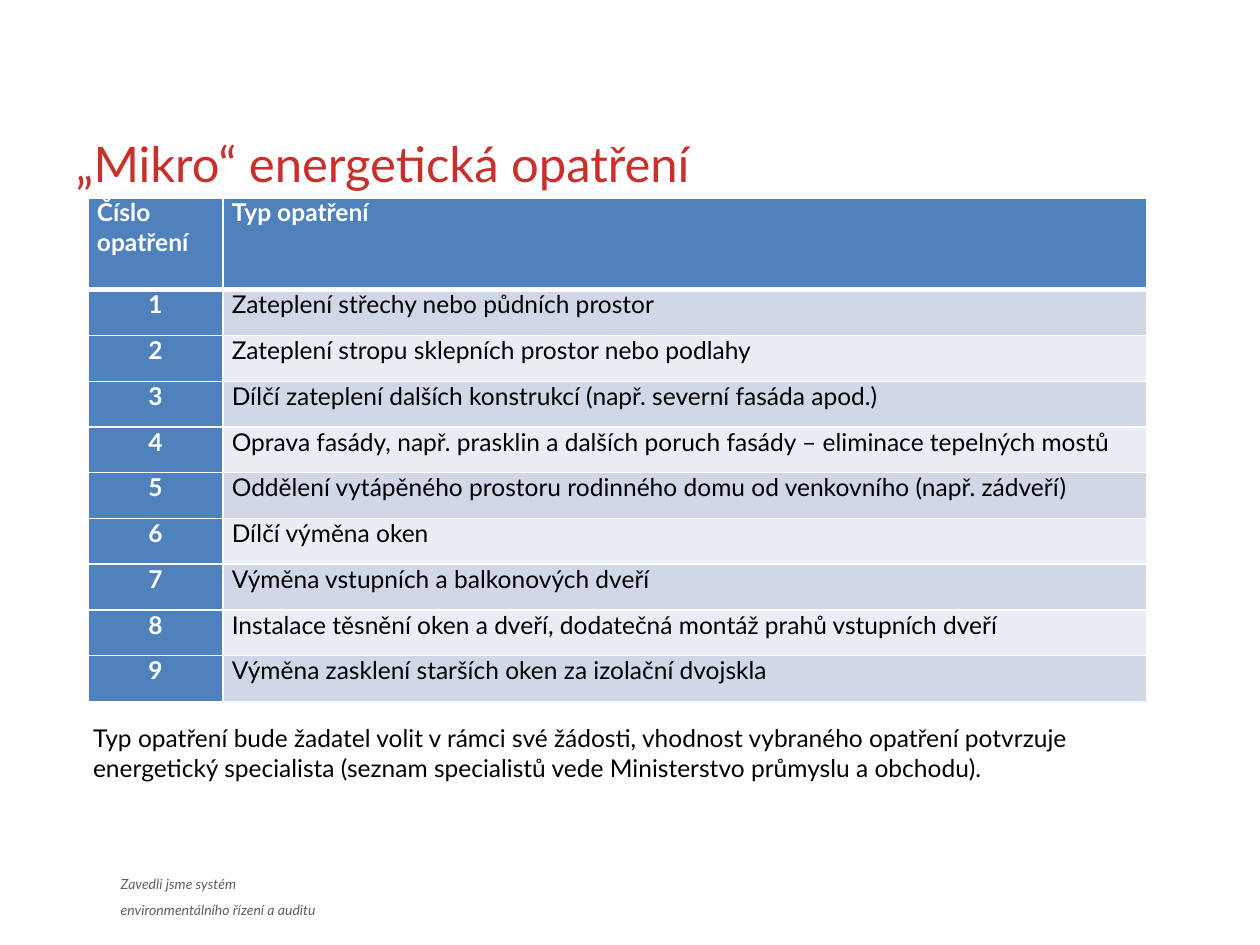
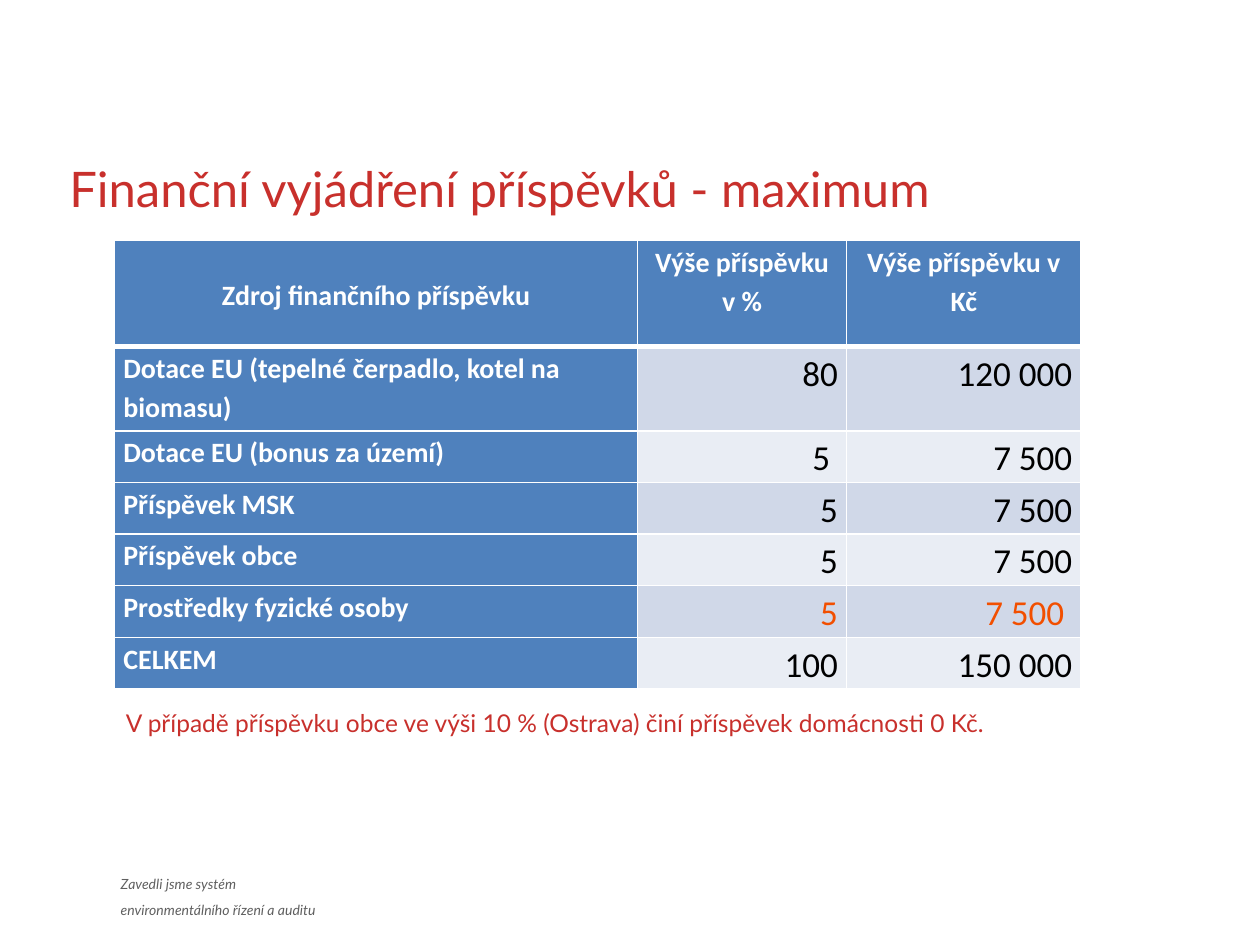
from pptx import Presentation
from pptx.dml.color import RGBColor
from pptx.enum.text import MSO_ANCHOR, MSO_AUTO_SIZE, PP_ALIGN
from pptx.oxml import parse_xml
from pptx.oxml.ns import nsdecls
from pptx.util import Inches, Pt

RED = RGBColor(0xC8, 0x30, 0x2C)
ORANGE = RGBColor(0xF2, 0x4F, 0x00)
BLUE = RGBColor(0x4F, 0x81, 0xBD)
BAND_DARK = RGBColor(0xD0, 0xD8, 0xE8)
BAND_LIGHT = RGBColor(0xE9, 0xED, 0xF4)
GREY = RGBColor(0x5F, 0x5F, 0x5F)
BLACK = RGBColor(0, 0, 0)
WHITE = RGBColor(0xFF, 0xFF, 0xFF)

TEXT_FONT = "Lato"
LEFT, CENTER, RIGHT, JUSTIFY = (
    PP_ALIGN.LEFT, PP_ALIGN.CENTER, PP_ALIGN.RIGHT, PP_ALIGN.JUSTIFY)


class Deck:
    """Holds the presentation, its style and the current slide."""

    def __init__(self):
        self.presentation = Presentation()
        self.presentation.slide_width = Inches(10)
        self.presentation.slide_height = Inches(7.5)
        self.slide = None

    def add_slide(self, title, left, top, width):
        layout = self.presentation.slide_layouts.get_by_name("Title Only")
        self.slide = self.presentation.slides.add_slide(layout)
        self.add_footer()
        shape = self.slide.shapes.title
        shape.left, shape.top = Inches(left), Inches(top)
        shape.width, shape.height = Inches(width), Inches(0.61)
        self.fill_frame(shape.text_frame, [title], 28, RED, MSO_ANCHOR.MIDDLE)

    def add_run(self, paragraph, text, size, color, font=TEXT_FONT, align=LEFT,
                bold=False, italic=False, line_spacing=1.0):
        paragraph.alignment = align
        paragraph.line_spacing = line_spacing
        run = paragraph.add_run()
        run.text = text
        run.font.name = font
        run.font.size = Pt(size)
        run.font.bold = bold
        run.font.italic = italic
        run.font.color.rgb = color

    def fill_frame(self, frame, lines, size, color, anchor=MSO_ANCHOR.TOP, **style):
        frame.word_wrap = True
        frame.auto_size = MSO_AUTO_SIZE.NONE
        frame.vertical_anchor = anchor
        for index, line in enumerate(lines):
            paragraph = frame.add_paragraph() if index else frame.paragraphs[0]
            paragraph.space_before = Pt(size / 2 if index else 0)
            self.add_run(paragraph, line, size, color, **style)

    def add_text(self, lines, left, top, width, height, size, color, **style):
        shape = self.slide.shapes.add_textbox(
            Inches(left), Inches(top), Inches(width), Inches(height))
        self.fill_frame(shape.text_frame, lines, size, color, **style)

    def add_footer(self):
        self.add_text(["Zavedli jsme systém", "environmentálního řízení a auditu"],
                      0.86, 6.88, 1.89, 0.41, 8, GREY,
                      align=JUSTIFY, italic=True, line_spacing=1.15)

    def add_table(self, rows, left, top, column_widths, row_heights):
        """Adds a banded table and returns it with its cells still empty of text."""
        table = self.slide.shapes.add_table(
            len(rows), len(column_widths), Inches(left), Inches(top),
            Inches(sum(column_widths)), Inches(sum(row_heights))).table
        for column, width in zip(table.columns, column_widths):
            column.width = Inches(width)
        for row, height in zip(table.rows, row_heights):
            row.height = Inches(height)
        for row_index, row in enumerate(table.rows):
            for column_index, cell in enumerate(row.cells):
                self.style_cell(cell, row_index, column_index)
        return table

    def style_cell(self, cell, row_index, column_index):
        cell.margin_left = cell.margin_right = Inches(0.07)
        cell.margin_top = cell.margin_bottom = 0
        # The rule under the header is thicker than the others
        widths = {"L": 1, "R": 1, "T": 3 if row_index == 1 else 1,
                  "B": 3 if row_index == 0 else 1}
        properties = cell._tc.get_or_add_tcPr()
        for side, width in widths.items():
            properties.append(parse_xml(
                f'<a:ln{side} {nsdecls("a")} w="{Pt(width)}"><a:solidFill>'
                f'<a:srgbClr val="{WHITE}"/></a:solidFill></a:ln{side}>'))
        cell.fill.solid()
        if row_index == 0 or column_index == 0:
            cell.fill.fore_color.rgb = BLUE
        else:
            cell.fill.fore_color.rgb = BAND_DARK if row_index % 2 else BAND_LIGHT

    def fill_cell(self, cell, text, size, color, **style):
        self.add_run(cell.text_frame.paragraphs[0], text, size, color, **style)


def build_measures(deck):
    deck.add_slide("„Mikro“ energetická opatření", 0.5, 0.99, 6.13)

    # Numbered list of measures
    measures = [
        "Zateplení střechy nebo půdních prostor",
        "Zateplení stropu sklepních prostor nebo podlahy",
        "Dílčí zateplení dalších konstrukcí (např. severní fasáda apod.)",
        "Oprava fasády, např. prasklin a dalších poruch fasády – eliminace tepelných mostů",
        "Oddělení vytápěného prostoru rodinného domu od venkovního (např. zádveří)",
        "Dílčí výměna oken",
        "Výměna vstupních a balkonových dveří",
        "Instalace těsnění oken a dveří, dodatečná montáž prahů vstupních dveří",
        "Výměna zasklení starších oken za izolační dvojskla",
    ]
    rows = [("Číslo opatření", "Typ opatření")]
    rows += [(str(number), measure) for number, measure in enumerate(measures, 1)]
    table = deck.add_table(rows, 0.7, 1.57, [1.07, 7.33],
                           [0.73] + [3.27 / len(measures)] * len(measures))
    for row_index, (number, measure) in enumerate(rows):
        header = row_index == 0
        deck.fill_cell(table.cell(row_index, 0), number, 14, WHITE, bold=True,
                       align=JUSTIFY if header else CENTER)
        deck.fill_cell(table.cell(row_index, 1), measure, 14,
                       WHITE if header else BLACK, bold=header, align=JUSTIFY)

    # Note below the table
    deck.add_text(
        ["Typ opatření bude žadatel volit v rámci své žádosti, vhodnost vybraného "
         "opatření potvrzuje energetický specialista (seznam specialistů vede "
         "Ministerstvo průmyslu a obchodu)."],
        0.64, 5.69, 8.87, 0.72, 14, BLACK)


def build_contributions(deck):
    deck.add_slide("Finanční vyjádření příspěvků - maximum", 0.45, 1.19, 8.24)

    # Sources of funding
    rows = [
        ("Zdroj finančního příspěvku", "Výše příspěvku v %", "Výše příspěvku v Kč"),
        ("Dotace EU (tepelné čerpadlo, kotel na biomasu)", "80", "120 000"),
        ("Dotace EU (bonus za území)", "5 ", "7 500"),
        ("Příspěvek MSK", "5", "7 500"),
        ("Příspěvek obce", "5", "7 500"),
        ("Prostředky fyzické osoby", "5", "7 500 "),
        ("CELKEM", "100", "150 000"),
    ]
    own_funds_row = 5
    table = deck.add_table(rows, 0.91, 1.91, [4.15, 1.66, 1.86],
                           [0.84, 0.67] + [0.41] * 5)
    table.cell(0, 0).vertical_anchor = MSO_ANCHOR.MIDDLE
    for row_index, row in enumerate(rows):
        for column_index, text in enumerate(row):
            label = row_index == 0 or column_index == 0
            if label:
                size, color = 16, WHITE
                align = LEFT if row_index else CENTER
            else:
                size, align = 20, RIGHT
                color = ORANGE if row_index == own_funds_row else BLACK
            deck.fill_cell(table.cell(row_index, column_index), text, size, color,
                           font="Calibri", align=align, bold=label,
                           line_spacing=1.15)

    # Note below the table
    deck.add_text(
        ["V případě příspěvku obce ve výši 10 % (Ostrava) činí příspěvek "
         "domácnosti 0 Kč."],
        0.9, 5.43, 8.24, 0.61, 14, RED, anchor=MSO_ANCHOR.MIDDLE)


def main():
    deck = Deck()
    build_measures(deck)
    build_contributions(deck)
    deck.presentation.save("out.pptx")


if __name__ == "__main__":
    main()
